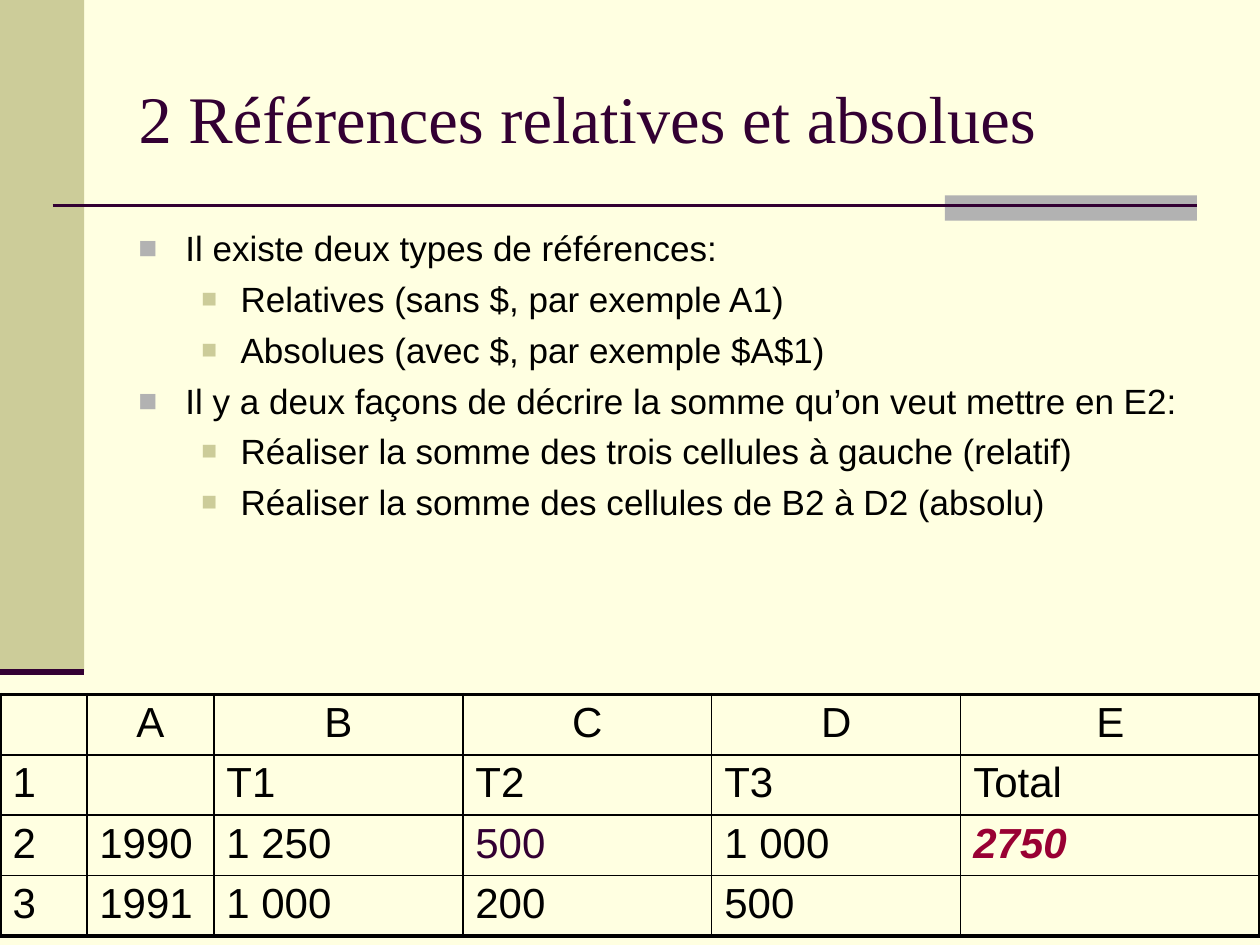
from lxml.etree import SubElement
from pptx import Presentation
from pptx.dml.color import RGBColor
from pptx.enum.shapes import MSO_CONNECTOR, MSO_SHAPE
from pptx.enum.text import MSO_ANCHOR, PP_ALIGN
from pptx.oxml.ns import qn
from pptx.util import Cm, Pt

CREAM = RGBColor(0xFF, 0xFF, 0xE1)
OLIVE = RGBColor(0xCC, 0xCC, 0x99)
GREY = RGBColor(0xB2, 0xB2, 0xB2)
PLUM = RGBColor(0x33, 0x00, 0x33)
CRIMSON = RGBColor(0x99, 0x00, 0x33)
BLACK = RGBColor(0, 0, 0)

TITLE = "2 Références relatives et absolues"
BULLETS = [
    (0, "Il existe deux types de références:"),
    (1, "Relatives (sans $, par exemple A1)"),
    (1, "Absolues (avec $, par exemple $A$1)"),
    (0, "Il y a deux façons de décrire la somme qu’on veut mettre en E2:"),
    (1, "Réaliser la somme des trois cellules à gauche (relatif)"),
    (1, "Réaliser la somme des cellules de B2 à D2 (absolu)"),
]
# Per level: left margin, hanging indent, bullet colour, bullet size in %
LEVELS = [(Cm(0.95), Cm(0.95), GREY, 90), (Cm(2.06), Cm(0.79), OLIVE, 75)]
SHEET = [
    ["", "A", "B", "C", "D", "E"],
    ["1", "", "T1", "T2", "T3", "Total"],
    ["2", "1990", "1 250", "500", "1 000", "2750"],
    ["3", "1991", "1 000", "200", "500", ""],
]
COL_WIDTHS = [Cm(w) for w in (1.75, 2.56, 5.02, 5.02, 5.02, 6.03)]
ROW_HEIGHT = Cm(1.2)
THIN, THICK = Pt(1), Pt(2.25)


def style_run(r, font, size, color):
    r.font.name, r.font.size = font, Pt(size)
    r.font.color.rgb = color


def add_block(s, x, y, w, h, color):
    sp = s.shapes.add_shape(MSO_SHAPE.RECTANGLE, x, y, w, h)
    sp.shadow.inherit = False
    sp.fill.solid()
    sp.fill.fore_color.rgb = color
    sp.line.fill.background()


def add_rule(s, x, y, w, width):
    ln = s.shapes.add_connector(MSO_CONNECTOR.STRAIGHT, x, y, x + w, y)
    ln.line.color.rgb = PLUM
    ln.line.width = Pt(width)
    SubElement(ln._element.spPr, qn("a:effectLst"))


def add_side_band(s, x, y, w, h):
    add_block(s, x, y, w, h, OLIVE)
    add_rule(s, x, y + h, w, 3.5)


def add_header_rule(s, x, y, w):
    tab_w = Cm(5.08)
    add_block(s, x + w - tab_w, y - Cm(0.2), tab_w, Cm(0.51), GREY)
    add_rule(s, x, y, w, 1.5)


def place_title(s, x, y, w, h):
    sp = s.shapes.title
    sp.left, sp.top, sp.width, sp.height = x, y, w, h
    tf = sp.text_frame
    tf.text = TITLE
    tf.vertical_anchor = MSO_ANCHOR.MIDDLE
    p = tf.paragraphs[0]
    p.alignment = PP_ALIGN.LEFT
    style_run(p.runs[0], "Times New Roman", 38, PLUM)


def set_bullet(p, level):
    margin, hang, color, size = LEVELS[level]
    p.level = level
    pPr = p._p.get_or_add_pPr()
    pPr.set("marL", str(margin))
    pPr.set("indent", str(-hang))
    clr = SubElement(pPr, qn("a:buClr"))
    SubElement(clr, qn("a:srgbClr"), val=str(color))
    SubElement(pPr, qn("a:buSzPct"), val=str(size * 1000))
    SubElement(pPr, qn("a:buFont"), typeface="Arial")
    SubElement(pPr, qn("a:buChar"), char="■")


def add_bullets(s, x, y, w, h):
    tf = s.shapes.add_textbox(x, y, w, h).text_frame
    tf.word_wrap = True
    for i, (level, text) in enumerate(BULLETS):
        p = tf.add_paragraph() if i else tf.paragraphs[0]
        p.text = text
        p.space_before = Pt(5)
        set_bullet(p, level)
        style_run(p.runs[0], "Arial", 20, BLACK)


def set_borders(cell, widths):
    # Borders come before the fill in the cell properties
    tcPr = cell._tc.get_or_add_tcPr()
    for i, (side, width) in enumerate(widths.items()):
        ln = SubElement(tcPr, qn(f"a:ln{side}"), w=str(width))
        fill = SubElement(ln, qn("a:solidFill"))
        SubElement(fill, qn("a:srgbClr"), val=str(BLACK))
        tcPr.insert(i, ln)


def add_sheet(s, x, y):
    n_rows, n_cols = len(SHEET), len(COL_WIDTHS)
    table = s.shapes.add_table(n_rows, n_cols, x, y, sum(COL_WIDTHS),
                               n_rows * ROW_HEIGHT).table
    table.first_row = table.horz_banding = False
    for col, width in zip(table.columns, COL_WIDTHS):
        col.width = width
    for i, values in enumerate(SHEET):
        table.rows[i].height = ROW_HEIGHT
        for j, value in enumerate(values):
            cell = table.cell(i, j)
            cell.fill.background()
            cell.margin_top = cell.margin_bottom = Cm(0.1)
            set_borders(cell, {
                "L": THICK if j == 0 else THIN,
                "R": THICK if j == n_cols - 1 else THIN,
                "T": THICK if i == 0 else THIN,
                "B": THICK if i == n_rows - 1 else THIN,
            })
            if value:
                cell.text = value
                p = cell.text_frame.paragraphs[0]
                p.alignment = PP_ALIGN.CENTER if i == 0 else PP_ALIGN.LEFT
                style_run(p.runs[0], "Arial", 24, BLACK)

    # Highlighted values: C2 and the total in E2
    table.cell(2, 3).text_frame.paragraphs[0].runs[0].font.color.rgb = PLUM
    total = table.cell(2, 5).text_frame.paragraphs[0].runs[0].font
    total.color.rgb = CRIMSON
    total.bold = total.italic = True


def main():
    prs = Presentation()
    prs.slide_width, prs.slide_height = Cm(25.4), Cm(19.05)
    s = prs.slides.add_slide(prs.slide_layouts[5])
    s.background.fill.solid()
    s.background.fill.fore_color.rgb = CREAM

    add_side_band(s, 0, 0, Cm(1.7), Cm(13.55))
    add_header_rule(s, Cm(1.06), Cm(4.14), Cm(23.07))
    place_title(s, Cm(2.54), Cm(0.76), Cm(21.59), Cm(3.18))
    add_bullets(s, Cm(2.54), Cm(4.45), Cm(21.59), Cm(9.07))
    add_sheet(s, 0, Cm(14))
    prs.save("out.pptx")


if __name__ == "__main__":
    main()
